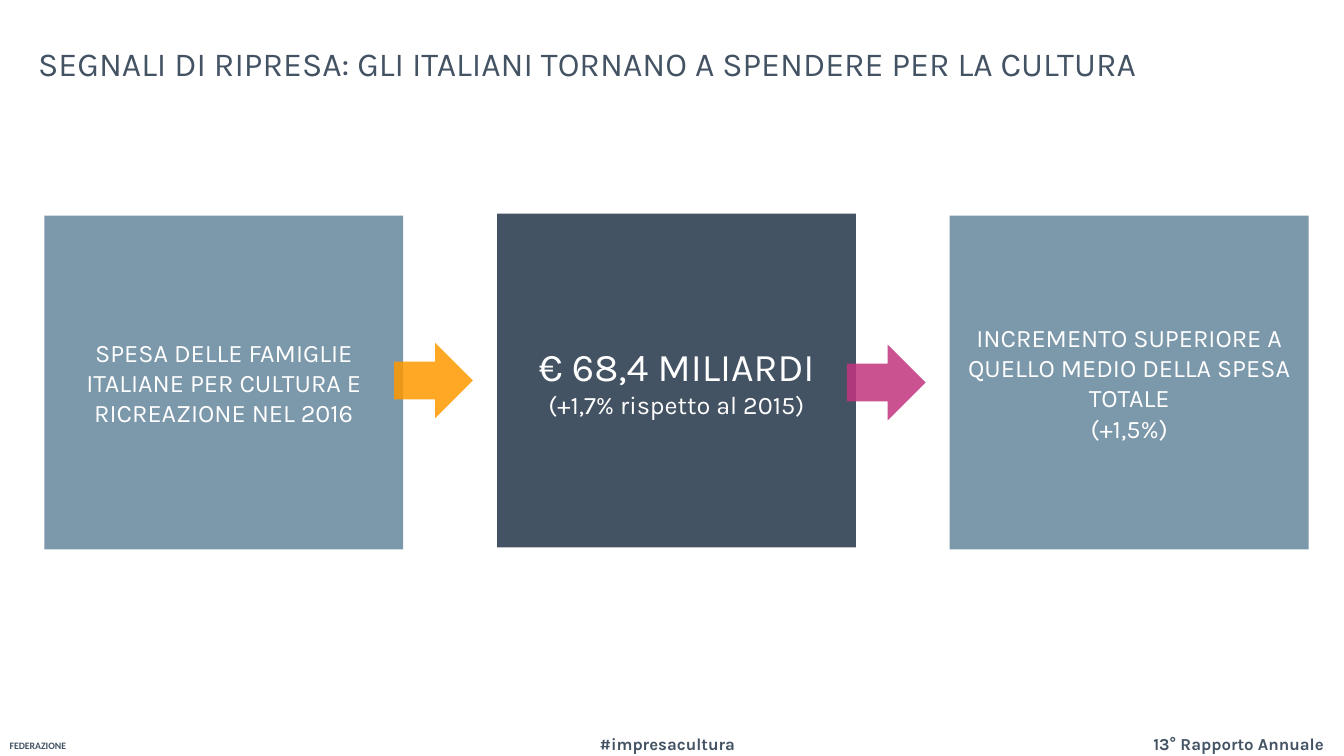
from lxml import etree
from pptx import Presentation
from pptx.dml.color import RGBColor as Rgb
from pptx.enum.shapes import MSO_SHAPE as Shape
from pptx.enum.text import MSO_ANCHOR as Anchor, PP_ALIGN as Align
from pptx.oxml.ns import qn
from pptx.util import Inches, Pt

# Content
TITLE = "SEGNALI DI RIPRESA: GLI ITALIANI TORNANO A SPENDERE PER LA CULTURA"
CARDS = [  # fill, top, lines as (text, size)
    ("steel", 2.14, [("SPESA DELLE FAMIGLIE ITALIANE PER CULTURA E RICREAZIONE NEL 2016", "body")]),
    ("navy", 2.12, [("€ 68,4 MILIARDI", "big"), ("(+1,7% rispetto al 2015)", "body")]),
    ("steel", 2.14, [("INCREMENTO SUPERIORE A QUELLO MEDIO DELLA SPESA TOTALE", "body"),
                     ("(+1,5%)", "body")]),
]
ARROWS = [("orange", 3.4), ("pink", 3.42)]  # fill, top
FOOTER = [  # text, box, size, font, align, wrap
    ("FEDERAZIONE", (-0.1, 7.29, 0.95, 0.22), "tiny", "small", Align.CENTER, True),
    ("13° Rapporto Annuale", (11.34, 7.23, 2.05, 0.3), "foot", "main", Align.LEFT, False),
    ("#impresacultura", (5.85, 7.23, 1.63, 0.3), "foot", "main", Align.LEFT, False),
]

THEME = {
    "color": {"navy": "445364", "steel": "7C98AB", "white": "FFFFFF",
              "orange": "FF9900", "pink": "C2347E"},
    "size": {"title": 24, "big": 28, "body": 18, "foot": 12, "tiny": 7},
    "font": {"main": "Karla", "small": "Calibri"},
}

# Layout
LEFT, STEP = 0.44, 4.49
CARD_W, CARD_H = 3.56, 3.31
ARROW_X, ARROW_W, ARROW_H = 3.91, 0.78, 0.75
OPACITY = 85


def color(name):
    return Rgb.from_string(THEME["color"][name])


def write(frame, lines, tint, align, font="main", bold=False):
    frame.text = "\n".join(text for text, _ in lines)
    for para, (_, size) in zip(frame.paragraphs, lines):
        para.alignment = align
        for run in para.runs:
            run.font.name = THEME["font"][font]
            run.font.size = Pt(THEME["size"][size])
            run.font.bold = bold
            run.font.color.rgb = color(tint)


def add_text(slide, box, lines, align, wrap=True, **style):
    frame = slide.shapes.add_textbox(*map(Inches, box)).text_frame
    frame.word_wrap = wrap
    write(frame, lines, "navy", align, **style)
    return frame


def add_block(slide, kind, box, fill):
    block = slide.shapes.add_shape(kind, *map(Inches, box))
    block.shadow.inherit = False
    block.fill.solid()
    block.fill.fore_color.rgb = color(fill)
    block.line.fill.background()
    return block


def main():
    deck = Presentation()
    deck.slide_width, deck.slide_height = Inches(13.33), Inches(7.5)
    slide = deck.slides.add_slide(deck.slide_layouts[6])

    # Footer
    for text, box, size, font, align, wrap in FOOTER:
        add_text(slide, box, [(text, size)], align, wrap, font=font, bold=True)

    # Title
    head = add_text(slide, (0.28, 0.19, 13.05, 0.93), [(TITLE, "title")], Align.LEFT)
    head.vertical_anchor = Anchor.MIDDLE
    head.paragraphs[0].line_spacing = 0.9

    # Cards
    for i, (fill, top, lines) in enumerate(CARDS):
        card = add_block(slide, Shape.RECTANGLE, (LEFT + i * STEP, top, CARD_W, CARD_H), fill)
        frame = card.text_frame
        frame.word_wrap = True
        frame.vertical_anchor = Anchor.MIDDLE
        write(frame, lines, "white", Align.CENTER)

    # Translucent arrows
    for i, (fill, top) in enumerate(ARROWS):
        box = (ARROW_X + i * STEP, top, ARROW_W, ARROW_H)
        arrow = add_block(slide, Shape.RIGHT_ARROW, box, fill)
        tone = arrow.fill._xPr.find(".//" + qn("a:srgbClr"))
        etree.SubElement(tone, qn("a:alpha"), val=str(OPACITY * 1000))

    deck.save("out.pptx")


if __name__ == "__main__":
    main()
